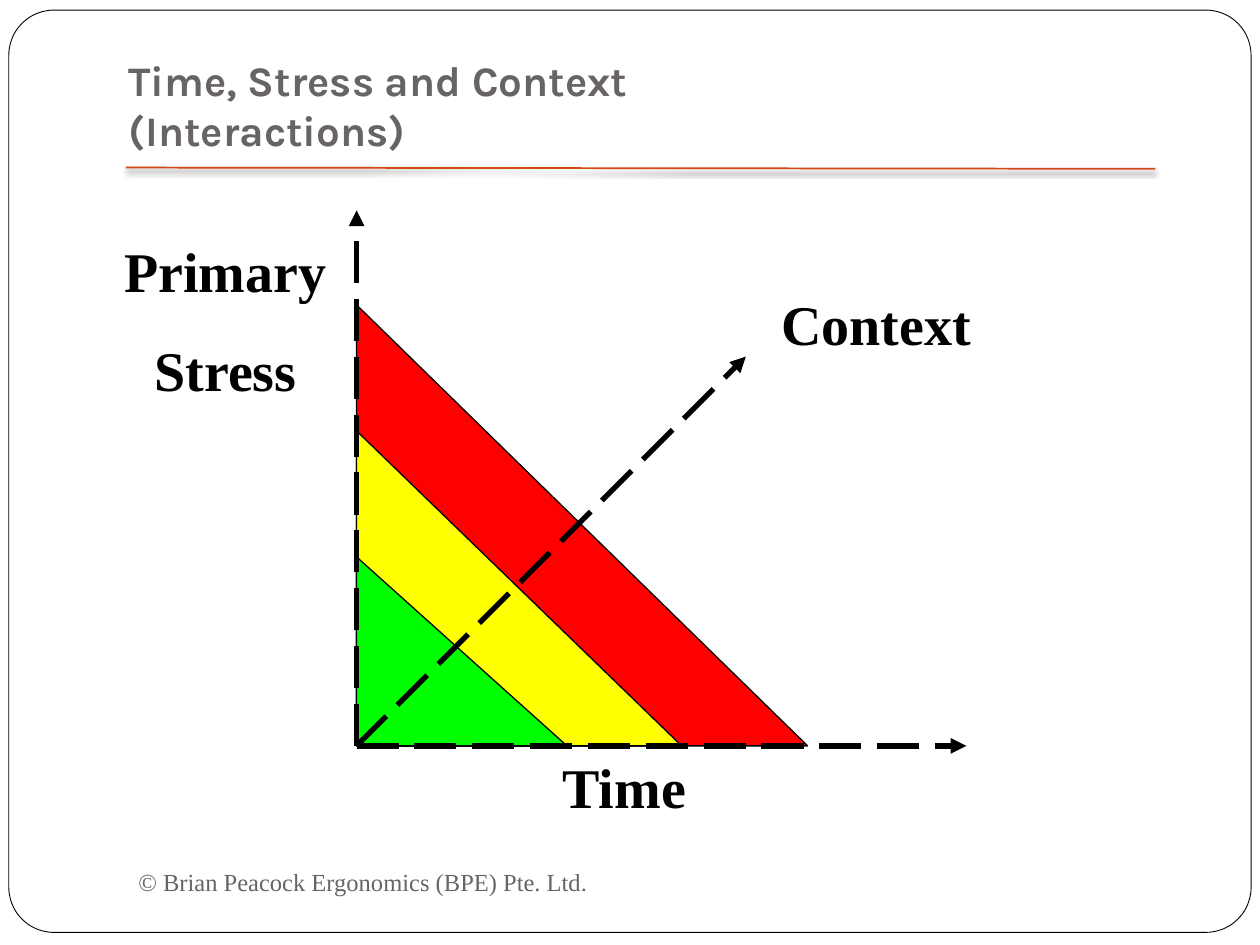
from dataclasses import dataclass

from pptx import Presentation
from pptx.dml.color import RGBColor
from pptx.enum.dml import MSO_LINE
from pptx.enum.shapes import MSO_CONNECTOR, MSO_SHAPE
from pptx.enum.text import MSO_ANCHOR, MSO_AUTO_SIZE, PP_ALIGN
from pptx.oxml import parse_xml
from pptx.oxml.ns import nsdecls
from pptx.shapes.autoshape import Shape
from pptx.shapes.connector import Connector
from pptx.slide import Slide
from pptx.util import Inches, Pt

BLACK = "000000"
GRAY = "696464"
SERIF = "Times New Roman"
ORIGIN = (2.83, 5.92)


@dataclass(frozen=True)
class Zone:
    width: float
    height: float
    color: str


@dataclass(frozen=True)
class Label:
    paragraphs: tuple[str, ...]
    box: tuple[float, float, float, float]


ZONES = (
    Zone(3.58, 3.5, "FF0000"),
    Zone(2.58, 2.5, "FFFF00"),
    Zone(1.67, 1.5, "00FF00"),
)
LABELS = (
    Label(("Time",), (2.83, 5.92, 4.25, 0.63)),
    Label(("Primary", "Stress"), (0.83, 1.83, 1.92, 1.43)),
    Label(("Context",), (5.83, 2.25, 2.25, 0.63)),
)
AXIS_ENDS = ((5.92, 2.83), (7.67, 5.92), (2.83, 1.67))


def rgb(color: str) -> RGBColor:
    return RGBColor.from_string(color)


def add_outlined_shape(slide: Slide, kind: MSO_SHAPE, box: tuple[float, ...],
                       fill: str, line_width: float) -> Shape:
    shape = slide.shapes.add_shape(kind, *map(Inches, box))
    shape.shadow.inherit = False
    shape.fill.solid()
    shape.fill.fore_color.rgb = rgb(fill)
    shape.line.color.rgb = rgb(BLACK)
    shape.line.width = Pt(line_width)
    return shape


def add_line(slide: Slide, start: tuple[float, float], end: tuple[float, float],
             color: str, width: float, effect: str = "") -> Connector:
    connector = slide.shapes.add_connector(
        MSO_CONNECTOR.STRAIGHT, *map(Inches, start + end))
    connector.line.color.rgb = rgb(color)
    connector.line.width = Pt(width)
    connector._element.spPr.append(
        parse_xml(f"<a:effectLst {nsdecls('a')}>{effect}</a:effectLst>"))
    return connector


def add_axis(slide: Slide, end: tuple[float, float]) -> None:
    axis = add_line(slide, ORIGIN, end, BLACK, 3)
    axis.line.dash_style = MSO_LINE.LONG_DASH
    axis.line._get_or_add_ln().append(
        parse_xml(f'<a:tailEnd {nsdecls("a")} type="triangle"/>'))


def add_zone(slide: Slide, zone: Zone) -> None:
    left, bottom = ORIGIN
    box = (left, bottom - zone.height, zone.width, zone.height)
    add_outlined_shape(slide, MSO_SHAPE.RIGHT_TRIANGLE, box, zone.color, 0.75)


def add_text(slide: Slide, label: Label, size: float, color: str, bold: bool,
             alignment: PP_ALIGN, anchor: MSO_ANCHOR) -> None:
    frame = slide.shapes.add_textbox(*map(Inches, label.box)).text_frame
    frame.word_wrap = True
    frame.vertical_anchor = anchor
    frame.text = "\n".join(label.paragraphs)
    for index, paragraph in enumerate(frame.paragraphs):
        paragraph.alignment = alignment
        paragraph.space_before = Pt(18 if index else 0)
        paragraph.font.name = SERIF
        paragraph.font.size = Pt(size)
        paragraph.font.bold = bold
        paragraph.font.color.rgb = rgb(color)


def add_header(slide: Slide) -> None:
    frame = add_outlined_shape(slide, MSO_SHAPE.ROUNDED_RECTANGLE,
                               (0.07, 0.08, 9.86, 7.32), "FFFFFF", 0.5)
    frame.adjustments[0] = 0.049
    add_line(slide, (1, 1.33), (9.17, 1.34), "D34817", 1,
             f'<a:outerShdw blurRad="{Pt(3)}" dist="{Pt(2)}" dir="5400000">'
             f'<a:srgbClr val="{BLACK}"><a:alpha val="50000"/></a:srgbClr>'
             '</a:outerShdw>')
    title = slide.shapes.title
    slide.shapes._spTree.append(title._element)
    title.left, title.top, title.width, title.height = map(
        Inches, (0.92, 0.08, 8.5, 1.25))
    text_frame = title.text_frame
    text_frame.auto_size = MSO_AUTO_SIZE.NONE
    text_frame.vertical_anchor = MSO_ANCHOR.BOTTOM
    text_frame.margin_bottom = Inches(0.1)
    text_frame.text = "Time, Stress and Context\v(Interactions)"
    paragraph = text_frame.paragraphs[0]
    paragraph.alignment = PP_ALIGN.LEFT
    paragraph.font.name = "Karla"
    paragraph.font.size = Pt(24)
    paragraph.font.bold = True
    paragraph.font.color.rgb = rgb(GRAY)


def main() -> None:
    presentation = Presentation()
    presentation.slide_width = Inches(10)
    presentation.slide_height = Inches(7.5)
    slide = presentation.slides.add_slide(presentation.slide_layouts[5])
    add_header(slide)
    for zone in ZONES:
        add_zone(slide, zone)
    for label in LABELS:
        add_text(slide, label, 32, BLACK, True, PP_ALIGN.CENTER, MSO_ANCHOR.TOP)
    for end in AXIS_ENDS:
        add_axis(slide, end)
    copyright_label = Label(("© Brian Peacock Ergonomics (BPE) Pte. Ltd.",),
                            (1, 6.75, 4.33, 0.5))
    add_text(slide, copyright_label, 14, GRAY, False, PP_ALIGN.LEFT,
             MSO_ANCHOR.MIDDLE)
    presentation.save("out.pptx")


if __name__ == "__main__":
    main()
